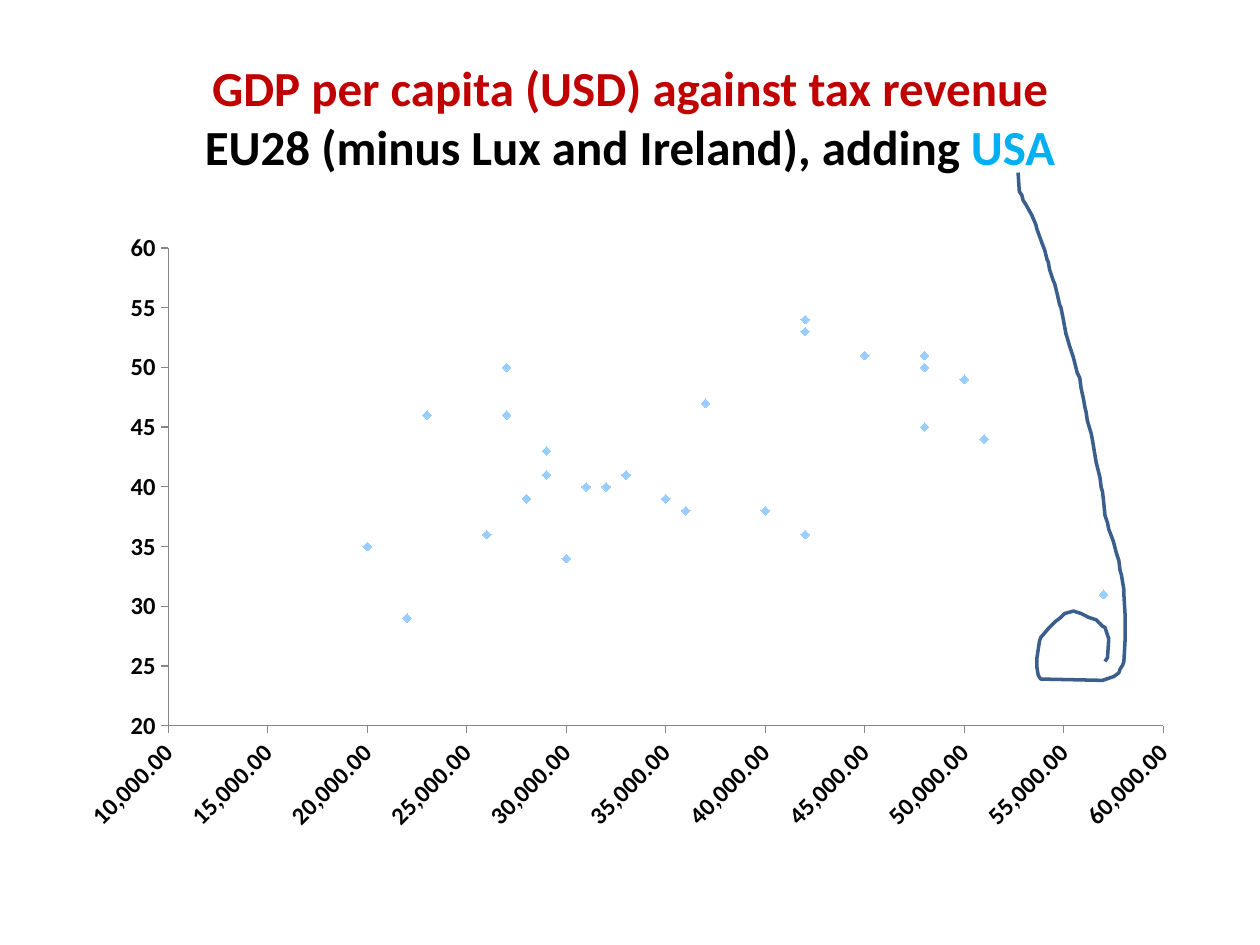
from lxml.etree import SubElement
from pptx import Presentation
from pptx.chart.data import XyChartData
from pptx.dml.color import RGBColor
from pptx.enum.chart import XL_CHART_TYPE, XL_MARKER_STYLE, XL_TICK_MARK
from pptx.enum.text import MSO_ANCHOR, PP_ALIGN
from pptx.oxml.ns import qn
from pptx.util import Pt

FONT = "Calibri"
TITLE_BOX = (36, 21.6, 648, 90)
CHART_BOX = (36, 126, 648, 356.4)
PLOT_BOX = (60.2, 15.7, 568.6, 273.1)  # relative to the chart
LOOP_BOX = (581.76, 98.64, 61.92, 290.16)

TITLE_RUNS = [
    ("GDP per capita (USD) against tax revenue", "C00000"),
    None,
    ("EU28 (minus Lux and Ireland), adding ", "000000"),
    ("USA", "00B0F0"),
]

# GDP per capita in thousands of USD, tax revenue
COUNTRIES = [
    (48, 50), (45, 51), (20, 35), (23, 46), (35, 39), (33, 41), (48, 51),
    (29, 41), (42, 54), (42, 53), (48, 45), (27, 50), (27, 46), (37, 47),
    (26, 36), (30, 34), (40, 38), (51, 44), (28, 39), (29, 43), (22, 29),
    (31, 40), (32, 40), (36, 38), (50, 49), (42, 36), (57, 31),
]

# Hand-drawn stroke, in steps of 0.72 pt from the corner of its box
LOOP_STEP = 0.72
LOOP_POINTS = [
    (0, 0), (1, 15), (3, 18), (4, 22), (6, 25), (11, 34), (14, 41), (15, 45),
    (19, 56), (21, 61), (23, 69), (24, 71), (25, 77), (28, 86), (29, 88),
    (31, 96), (33, 105), (34, 107), (36, 117), (38, 128), (39, 131), (41, 138),
    (43, 144), (44, 147), (46, 155), (47, 159), (49, 163), (50, 171), (52, 180),
    (53, 186), (54, 190), (55, 197), (58, 207), (59, 212), (62, 230), (64, 238),
    (65, 242), (66, 250), (67, 253), (68, 262), (69, 272), (71, 278), (72, 283),
    (75, 291), (76, 294), (78, 302), (80, 308), (81, 316), (82, 319), (84, 331),
    (84, 335), (85, 352), (85, 370), (84, 388), (83, 391), (81, 394), (80, 397),
    (76, 400), (70, 402), (67, 403), (18, 402), (16, 399), (15, 393), (15, 385),
    (17, 372), (18, 369), (24, 362), (30, 356), (34, 353), (37, 350), (44, 348),
    (50, 350), (56, 353), (62, 355), (67, 360), (69, 361), (71, 367), (72, 370),
    (71, 385), (69, 388),
]


def color(hex_code):
    return RGBColor.from_string(hex_code)


def set_values(target, values):
    for name, value in values.items():
        setattr(target, name, value)


def box_lengths(box):
    return [Pt(length) for length in box]


def place_title(slide, box):
    title = slide.shapes.title
    set_values(title, dict(zip(("left", "top", "width", "height"), box_lengths(box))))
    set_values(title.text_frame, {"word_wrap": True, "vertical_anchor": MSO_ANCHOR.MIDDLE})
    paragraph = title.text_frame.paragraphs[0]
    paragraph.alignment = PP_ALIGN.CENTER
    for part in TITLE_RUNS:
        if part is None:
            paragraph.add_line_break()
            continue
        run = paragraph.add_run()
        run.text, hex_code = part
        set_values(run.font, {"name": FONT, "size": Pt(28), "bold": True})
        run.font.color.rgb = color(hex_code)


def format_axis(axis, minimum, maximum, step, number_format):
    set_values(axis, {
        "minimum_scale": minimum, "maximum_scale": maximum, "major_unit": step,
        "has_major_gridlines": False, "major_tick_mark": XL_TICK_MARK.OUTSIDE,
    })
    set_values(axis.tick_labels, {"number_format": number_format,
                                  "number_format_is_linked": False})
    set_values(axis.tick_labels.font, {"name": FONT, "size": Pt(14), "bold": True})
    axis.tick_labels.font.color.rgb = color("000000")
    axis.format.line.color.rgb = color("868686")
    axis.format.line.width = Pt(0.75)


def fix_plot_area(chart, box, chart_width, chart_height):
    """Place the inner plot area in a box given in points within the chart."""
    plot_area = chart._chartSpace.chart.plotArea
    layout = plot_area.find(qn("c:layout"))
    if layout is None:
        layout = SubElement(plot_area, qn("c:layout"))
        plot_area.insert(0, layout)
    manual = SubElement(layout, qn("c:manualLayout"))
    left, top, width, height = box
    settings = {"layoutTarget": "inner", "xMode": "edge", "yMode": "edge",
                "x": left / chart_width, "y": top / chart_height,
                "w": width / chart_width, "h": height / chart_height}
    for name, value in settings.items():
        SubElement(manual, qn(f"c:{name}")).set("val", str(value))


def place_scatter(slide, box):
    data = XyChartData()
    points = data.add_series("Series 1")
    for gdp, revenue in COUNTRIES:
        points.add_data_point(gdp * 1000, revenue)
    chart = slide.shapes.add_chart(
        XL_CHART_TYPE.XY_SCATTER, *box_lengths(box), data).chart
    set_values(chart, {"has_legend": False, "has_title": False})
    set_values(chart.font, {"name": FONT, "size": Pt(10)})
    chart.font.color.rgb = color("000000")
    chart.plots[0].vary_by_categories = False

    series = chart.plots[0].series[0]
    series.smooth = False
    series.format.line.fill.background()
    set_values(series.marker, {"style": XL_MARKER_STYLE.DIAMOND, "size": 5})
    series.marker.format.fill.solid()
    series.marker.format.fill.fore_color.rgb = color("99CCFF")
    series.marker.format.line.color.rgb = color("99CCFF")

    format_axis(chart.category_axis, 10000, 60000, 5000, "#,##0.00")
    format_axis(chart.value_axis, 20, 60, 5, "0")
    label_body = chart.category_axis._element.find(f"{qn('c:txPr')}/{qn('a:bodyPr')}")
    label_body.set("rot", str(-45 * 60000))
    fix_plot_area(chart, PLOT_BOX, *box[2:])


def place_loop(slide, box):
    left, top = box_lengths(box)[:2]
    builder = slide.shapes.build_freeform(*LOOP_POINTS[0], scale=Pt(LOOP_STEP))
    builder.add_line_segments(LOOP_POINTS[1:], close=False)
    loop = builder.convert_to_shape(left, top)
    loop.shadow.inherit = False
    loop.fill.background()
    loop.line.color.rgb = color("3A5F8C")
    loop.line.width = Pt(2)


def main():
    presentation = Presentation()
    set_values(presentation, {"slide_width": Pt(720), "slide_height": Pt(540)})
    slide = presentation.slides.add_slide(presentation.slide_layouts.get_by_name("Title Only"))
    place_title(slide, TITLE_BOX)
    place_scatter(slide, CHART_BOX)
    place_loop(slide, LOOP_BOX)
    presentation.save("out.pptx")


if __name__ == "__main__":
    main()
